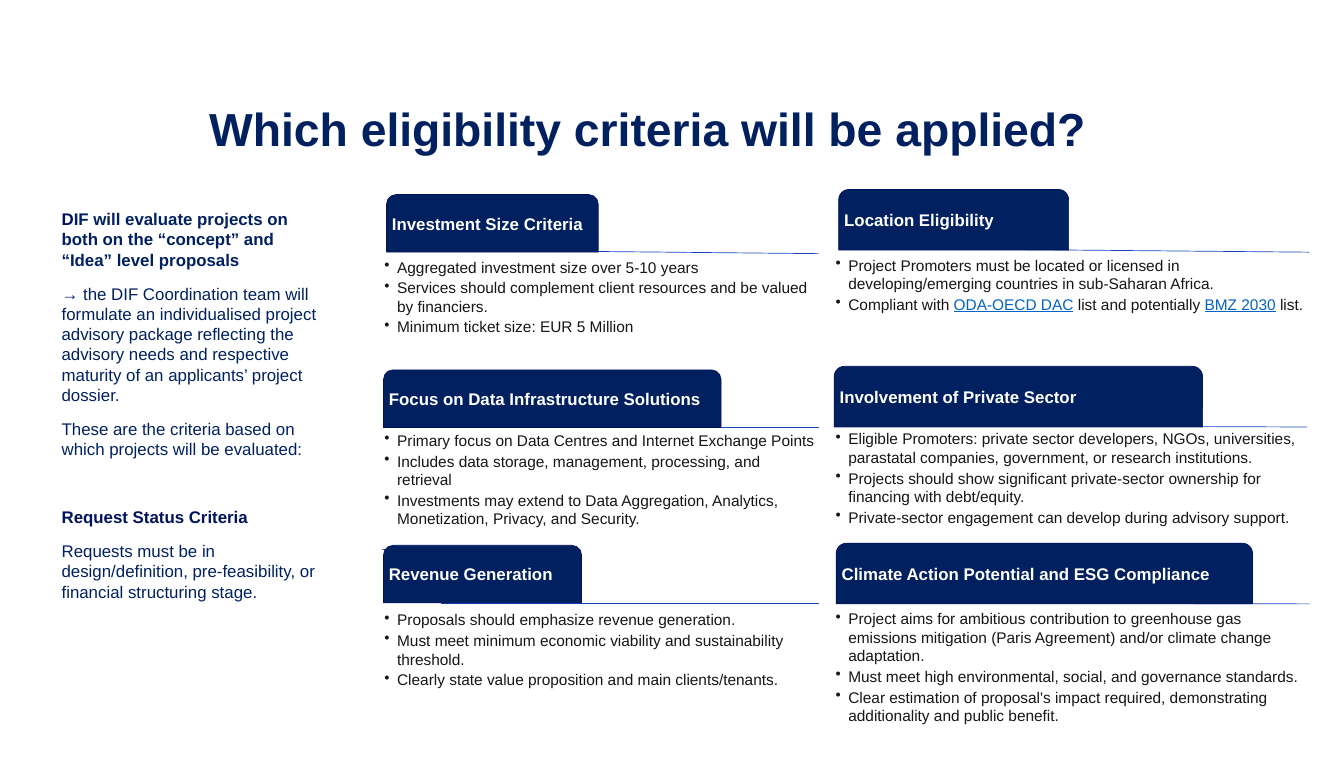
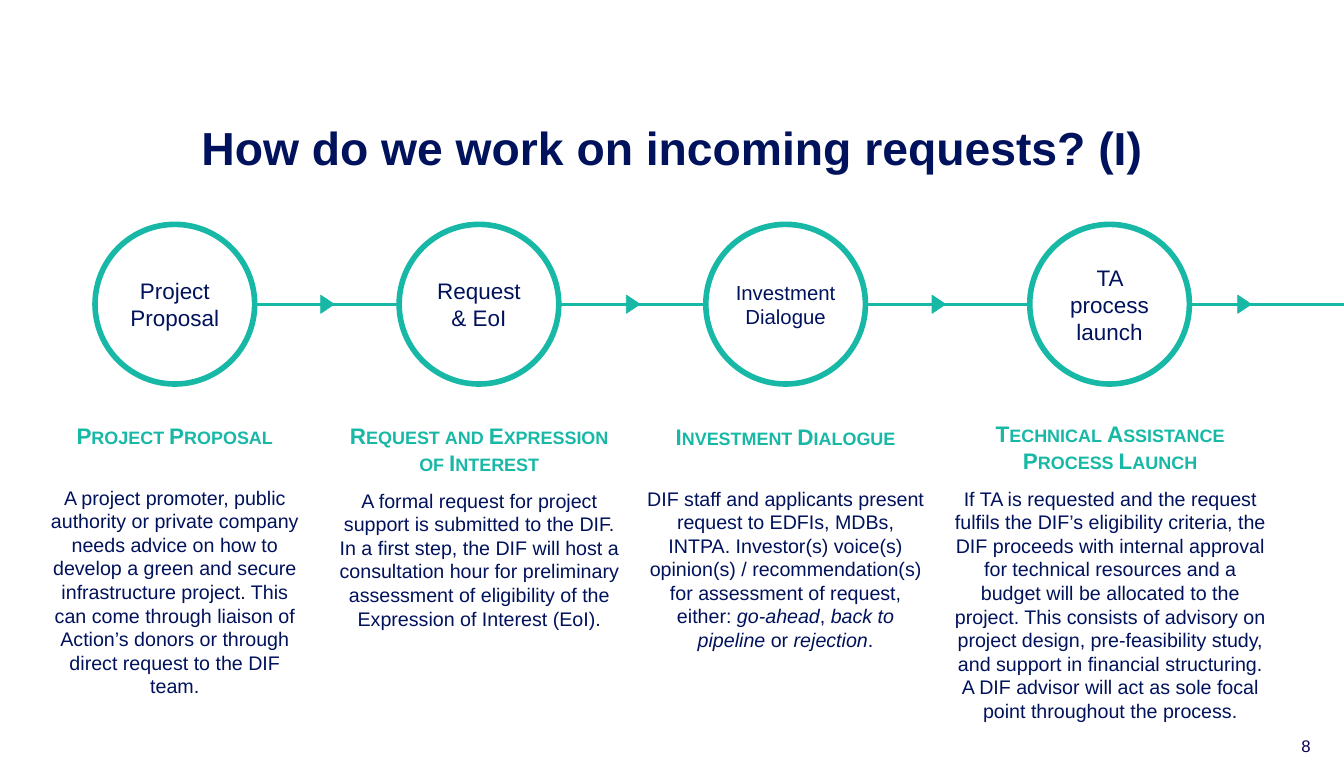
"""Build two slides on eligibility criteria and on the handling of incoming requests."""
from lxml.etree import SubElement
from pptx import Presentation
from pptx.dml.color import RGBColor
from pptx.enum.shapes import MSO_CONNECTOR, MSO_SHAPE
from pptx.enum.text import MSO_ANCHOR, MSO_AUTO_SIZE, PP_ALIGN
from pptx.oxml.ns import qn
from pptx.util import Pt

COLORS = {
    "navy": "002060", "ink": "00125C", "teal": "18B8A6", "rule": "1543BC",
    "text": "171616", "link": "0563C1", "white": "FFFFFF", "number": "0A0050",
}
FONT = "Arial"
SLIDE_WIDTH, SLIDE_HEIGHT = 1915.2, 1080

LINK = {"color": "link", "underline": True}
ITALIC = {"italic": True}
STRONG = {"bold": True}

CRITERIA_TITLE = "Which eligibility criteria will be applied?"
INTRO = [
    ([("D", {"color": "ink"}),
      ("IF will evaluate projects on both on the “concept” and “Idea” level proposals", {})], STRONG),
    ([("→ ", STRONG),
      ("the DIF Coordination team will formulate an individualised project advisory package "
       "reflecting the advisory needs and respective maturity of an applicants’ project dossier.", {})], {}),
    ("These are the criteria based on which projects will be evaluated:", {}),
    ("Request Status Criteria", {"bold": True, "color": "ink", "before": 68}),
    ("Requests must be in design/definition, pre-feasibility, or financial structuring stage.", {}),
]
CRITERIA_COLUMNS = [
    {"tab_height": 82, "list_left": 544.3, "list_width": 622, "cards": [
        {"label": "Investment Size Criteria", "tab": (550.8, 277.2, 301.7), "list_top": 363.6,
         "rule": (797, 357.8, 1166.4, 361.4),
         "points": ["Aggregated investment size over 5-10 years",
                    "Services should complement client resources and be valued by financiers.",
                    "Minimum ticket size: EUR 5 Million"]},
        {"label": "Focus on Data Infrastructure Solutions", "tab": (546.5, 527, 481), "list_top": 610.6,
         "rule": (609, 608.4, 1166.4, 608.4),
         "points": ["Primary focus on Data Centres and Internet Exchange Points",
                    "Includes data storage, management, processing, and retrieval",
                    "Investments may extend to Data Aggregation, Analytics, Monetization, Privacy, "
                    "and Security."]},
        {"label": "Revenue Generation", "tab": (546.5, 777, 282.2), "list_top": 866.2,
         "rule": (627.8, 859, 1166.4, 859),
         "points": ["Proposals should emphasize revenue generation.",
                    "Must meet minimum economic viability and sustainability threshold.",
                    "Clearly state value proposition and main clients/tenants."]},
    ]},
    {"tab_height": 86.4, "list_left": 1187.3, "list_width": 678.2, "cards": [
        {"label": "Location Eligibility", "tab": (1195.2, 270, 327.6), "list_top": 360.7,
         "rule": (1461.6, 355.7, 1865.5, 359.3),
         "points": ["Project Promoters must be located or licensed in developing/emerging countries "
                    "in sub-Saharan Africa.",
                    [("Compliant with ", {}), ("ODA-OECD DAC", LINK), (" list and potentially ", {}),
                     ("BMZ 2030", LINK), (" list.", {})]]},
        {"label": "Involvement of Private Sector", "tab": (1188.7, 522, 525), "list_top": 608.4,
         "rule": (1496.2, 607, 1862.6, 608.4),
         "points": ["Eligible Promoters: private sector developers, NGOs, universities, parastatal "
                    "companies, government, or research institutions.",
                    "Projects should show significant private-sector ownership for financing with "
                    "debt/equity.",
                    "Private-sector engagement can develop during advisory support."]},
        {"label": "Climate Action Potential and ESG Compliance", "tab": (1191.6, 774, 593.3),
         "list_top": 864.7, "rule": (1496.9, 859.7, 1866.2, 860.4),
         "points": ["Project aims for ambitious contribution to greenhouse gas emissions mitigation "
                    "(Paris Agreement) and/or climate change adaptation.",
                    "Must meet high environmental, social, and governance standards.",
                    "Clear estimation of proposal's impact required, demonstrating additionality and "
                    "public benefit."]},
    ]},
]
REVENUE_STUB = (544.3, 782.6, 662.4, 794.2)

PROCESS_TITLE = "How do we work on incoming requests? (I)"
STEPS = [
    {"circle": "Project Proposal", "circle_left": 135.4, "size": 32,
     "heading": "Project Proposal", "gap": 52, "box": (69, 601.2, 360, 381.6),
     "details": "A project promoter, public authority or private company needs advice on how to develop "
                "a green and secure infrastructure project. This can come through liaison of Action’s "
                "donors or through direct request to the DIF team."},
    {"circle": "Request & EoI", "circle_left": 568.8, "size": 32,
     "heading": "Request and Expression of Interest", "gap": 18, "box": (480.2, 601.2, 405.4, 359.3),
     "details": "A formal request for project support is submitted to the DIF. In a first step, the DIF "
                "will host a consultation hour for preliminary assessment of eligibility of the "
                "Expression of Interest (EoI)."},
    {"circle": "Investment Dialogue", "circle_left": 1005.8, "size": 29,
     "heading": "Investment Dialogue", "gap": 52, "box": (921, 602.6, 396.7, 383.8),
     "details": [("DIF staff and applicants present request to EDFIs, MDBs, INTPA. Investor(s) voice(s) "
                  "opinion(s) / recommendation(s) for assessment of request, either: ", {}),
                 ("go-ahead", ITALIC), (", ", {}), ("back to pipeline ", ITALIC), ("or ", {}),
                 ("rejection", ITALIC), (".", {})]},
    {"circle": "TA process launch", "circle_left": 1467.4, "size": 32,
     "heading": "Technical Assistance Process Launch", "gap": 18, "box": (1355.8, 598.3, 452.2, 384.5),
     "details": "If TA is requested and the request fulfils the DIF’s eligibility criteria, the DIF "
                "proceeds with internal approval for technical resources and a budget will be allocated "
                "to the project. This consists of advisory on project design, pre-feasibility study, and "
                "support in financial structuring. A DIF advisor will act as sole focal point "
                "throughout the process."},
]
CIRCLE_TOP, CIRCLE_SIZE = 319.7, 227.5
ARROW_LEFT, ARROW_STEP, ARROW_WIDTH, ARROW_HEIGHT = 453.6, 435.6, 26, 19.4
PAGE_NUMBER = "8"


def rgb(color):
    return RGBColor.from_string(COLORS[color])


def write(frame, content, size=24, color="text", bold=False, italic=False, underline=False,
          align=PP_ALIGN.LEFT, before=0, after=0, spacing=1.0, bullet=False, small_caps=False):
    """Append one paragraph; content is a string or a list of (text, format overrides)."""
    paragraph = frame.add_paragraph() if frame.text else frame.paragraphs[0]
    paragraph.alignment = align
    paragraph.line_spacing = spacing
    paragraph.space_before, paragraph.space_after = Pt(before), Pt(after)
    properties = paragraph._p.get_or_add_pPr()
    properties.set("marL", str(Pt(18) if bullet else 0))
    properties.set("indent", str(Pt(-18) if bullet else 0))
    if bullet:
        SubElement(properties, qn("a:buChar")).set("char", "•")
    else:
        SubElement(properties, qn("a:buNone"))
    base = {"color": color, "bold": bold, "italic": italic, "underline": underline}
    for text, overrides in [(content, {})] if isinstance(content, str) else content:
        look = {**base, **overrides}
        run = paragraph.add_run()
        run.text = text
        run.font.name, run.font.size = FONT, Pt(size)
        run.font.bold, run.font.italic = look["bold"], look["italic"]
        run.font.underline = look["underline"]
        run.font.color.rgb = rgb(look["color"])
        if small_caps:
            run._r.get_or_add_rPr().set("cap", "small")


def prepare(frame, margins, anchor=MSO_ANCHOR.TOP):
    frame.word_wrap = True
    frame.auto_size = MSO_AUTO_SIZE.NONE
    frame.vertical_anchor = anchor
    frame.margin_left = frame.margin_right = Pt(margins[0])
    frame.margin_top = frame.margin_bottom = Pt(margins[1])
    return frame


def place(placeholder, left, top, width, height):
    placeholder.left, placeholder.top = Pt(left), Pt(top)
    placeholder.width, placeholder.height = Pt(width), Pt(height)


def add_title(slide, text, bounds, color, align):
    title = slide.shapes.title
    place(title, *bounds)
    write(prepare(title.text_frame, (7.2, 3.6), MSO_ANCHOR.MIDDLE), text,
          size=66, color=color, bold=True, align=align, spacing=0.9)


def add_box(slide, bounds, margins):
    box = slide.shapes.add_textbox(*map(Pt, bounds))
    return prepare(box.text_frame, margins)


def add_preset(slide, preset, bounds, fill, line, line_width):
    shape = slide.shapes.add_shape(preset, *map(Pt, bounds))
    shape.shadow.inherit = False
    if fill:
        shape.fill.solid()
        shape.fill.fore_color.rgb = rgb(fill)
    else:
        shape.fill.background()
    shape.line.color.rgb = rgb(line)
    shape.line.width = Pt(line_width)
    return shape


def add_line(slide, ends, color, width):
    line = slide.shapes.add_connector(MSO_CONNECTOR.STRAIGHT, *map(Pt, ends))
    line.line.color.rgb = rgb(color)
    line.line.width = Pt(width)
    SubElement(line._element.spPr, qn("a:effectLst"))


def add_card(slide, card, column):
    add_line(slide, card["rule"], "rule", 1)
    tab = add_preset(slide, MSO_SHAPE.ROUND_2_SAME_RECTANGLE, (*card["tab"], column["tab_height"]),
                     "navy", "ink", 1)
    write(prepare(tab.text_frame, (3.6, 3.6), MSO_ANCHOR.MIDDLE), card["label"],
          color="white", bold=True, spacing=0.9)
    bounds = (column["list_left"], card["list_top"], column["list_width"], 163.4)
    points_frame = add_box(slide, bounds, (3.6, 3.6))
    for point in card["points"]:
        write(points_frame, point, size=22, after=3, bullet=True)


def build_criteria(prs):
    slide = prs.slides.add_slide(prs.slide_layouts[1])
    add_title(slide, CRITERIA_TITLE, (290.9, 116, 1410.5, 141.8), "navy", PP_ALIGN.LEFT)
    intro = slide.placeholders[1]
    place(intro, 80.6, 293.8, 386, 692)
    intro_frame = prepare(intro.text_frame, (7.2, 3.6))
    for content, look in INTRO:
        write(intro_frame, content, **{"color": "navy", "before": 19.9, **look})
    add_line(slide, REVENUE_STUB, "rule", 1)
    for column in CRITERIA_COLUMNS:
        for card in column["cards"]:
            add_card(slide, card, column)


def build_process(prs):
    slide = prs.slides.add_slide(prs.slide_layouts[5])
    add_title(slide, PROCESS_TITLE, (220.3, 143.3, 1475.3, 141.8), "ink", PP_ALIGN.CENTER)
    middle = CIRCLE_TOP + CIRCLE_SIZE / 2
    line_ends = [step["circle_left"] for step in STEPS[1:]] + [SLIDE_WIDTH]
    for index, (step, line_end) in enumerate(zip(STEPS, line_ends)):
        left = step["circle_left"]
        circle = add_preset(slide, MSO_SHAPE.FLOWCHART_CONNECTOR,
                            (left, CIRCLE_TOP, CIRCLE_SIZE, CIRCLE_SIZE), None, "teal", 8)
        write(prepare(circle.text_frame, (7.2, 3.6), MSO_ANCHOR.MIDDLE), step["circle"],
              size=step["size"], color="ink", align=PP_ALIGN.CENTER)
        add_line(slide, (left + CIRCLE_SIZE, middle, line_end, middle), "teal", 4)
        arrow = add_preset(slide, MSO_SHAPE.ISOSCELES_TRIANGLE,
                           (ARROW_LEFT + index * ARROW_STEP, middle - ARROW_HEIGHT / 2,
                            ARROW_WIDTH, ARROW_HEIGHT), "teal", "teal", 1)
        arrow.rotation = 90
        details_frame = add_box(slide, step["box"], (0, 0))
        write(details_frame, step["heading"], size=32, color="teal", bold=True,
              align=PP_ALIGN.CENTER, after=step["gap"], small_caps=True)
        write(details_frame, step["details"], size=28, color="ink", align=PP_ALIGN.CENTER)
    number_frame = add_box(slide, (1847.5, 1040.4, 52.6, 28), (7.2, 3.6))
    write(number_frame, PAGE_NUMBER, size=23.9, color="number", spacing=1.14)


def main():
    prs = Presentation()
    prs.slide_width, prs.slide_height = Pt(SLIDE_WIDTH), Pt(SLIDE_HEIGHT)
    build_criteria(prs)
    build_process(prs)
    prs.save("out.pptx")


if __name__ == "__main__":
    main()
